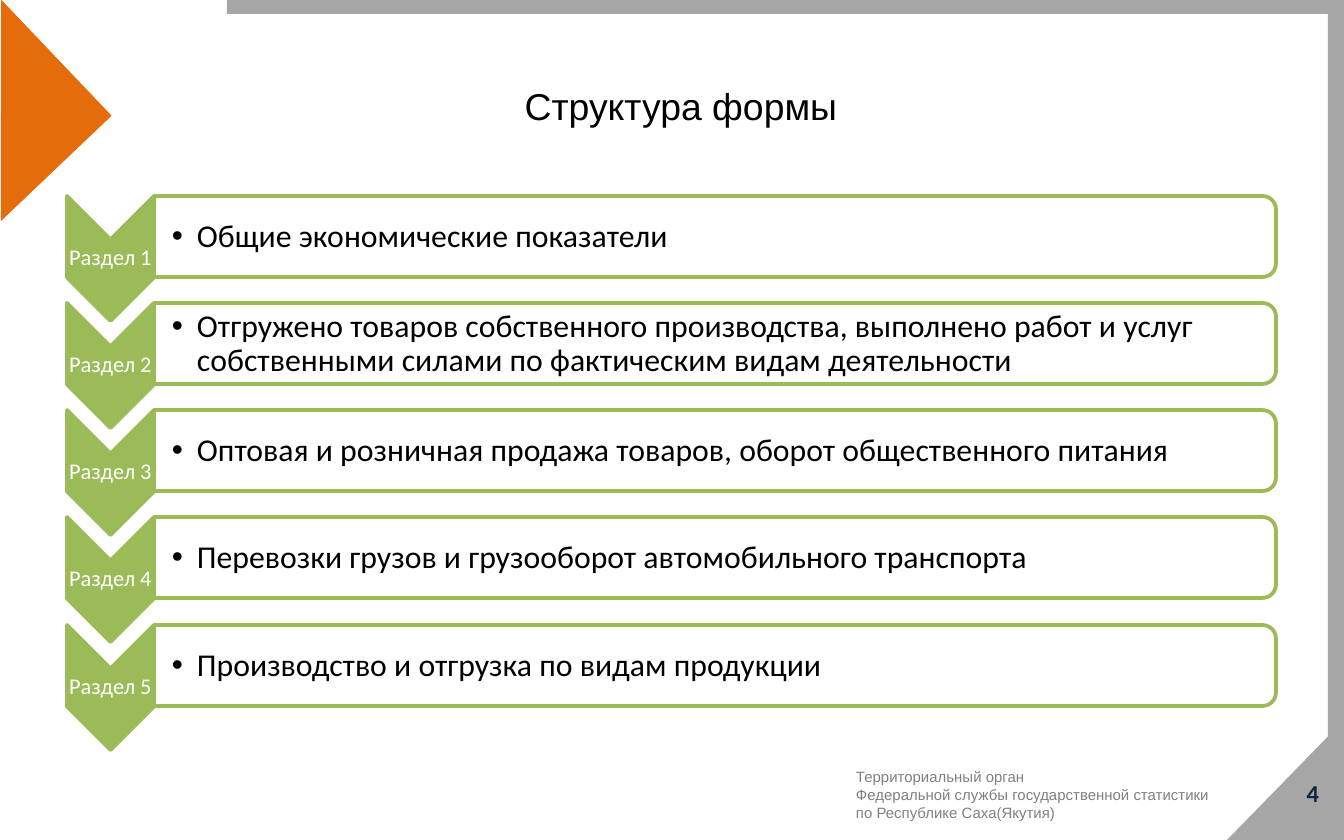
import pptx
import pptx.dml.color
import pptx.enum.shapes
import pptx.enum.text
import pptx.oxml.ns
import pptx.util
from lxml import etree

EMU_PER_PX = 914400 / 134.4
SHAPE = pptx.enum.shapes.MSO_SHAPE
ALIGN = pptx.enum.text.PP_ALIGN
GREY, ORANGE, GREEN, WHITE, BLACK = "A6A6A6", "E46C0A", "9BBB59", "FFFFFF", "000000"
FIRST_ROW_TOP = 196
LAST_ROW_TOP = 625
STANDARD_INSETS = (11, 5, 11, 5)

SECTIONS = [
    "Общие экономические показатели",
    "Отгружено товаров собственного производства, выполнено работ и услуг "
    "собственными силами по фактическим видам деятельности",
    "Оптовая и розничная продажа товаров, оборот общественного питания",
    "Перевозки грузов и грузооборот автомобильного транспорта",
    "Производство и отгрузка по видам продукции",
]
AGENCY = [
    "Территориальный орган",
    "Федеральной службы государственной статистики",
    "по Республике Саха(Якутия)",
]


def px(length):
    return pptx.util.Emu(round(length * EMU_PER_PX))


def color(value):
    return pptx.dml.color.RGBColor.from_string(value)


def add_figure(slide, kind, box, fill, rotation=0, outline=None):
    figure = slide.shapes.add_shape(kind, *map(px, box))
    figure.shadow.inherit = False
    figure.rotation = rotation
    figure.fill.solid()
    figure.fill.fore_color.rgb = color(fill)
    if outline:
        figure.line.color.rgb = color(outline)
        figure.line.width = pptx.util.Pt(2)
    else:
        figure.line.fill.background()
    return figure


def add_quarter_turned(slide, kind, visible_box, fill, rotation, outline=None):
    left, top, width, height = visible_box
    shift = (width - height) / 2
    frame = (left + shift, top - shift, height, width)
    return add_figure(slide, kind, frame, fill, rotation, outline)


def set_opacity(figure, percent):
    fill_color = figure.fill._xPr.find(".//" + pptx.oxml.ns.qn("a:srgbClr"))
    alpha = etree.SubElement(fill_color, pptx.oxml.ns.qn("a:alpha"))
    alpha.set("val", str(percent * 1000))


def add_bullet(paragraph, indent):
    properties = paragraph._p.get_or_add_pPr()
    properties.set("marL", str(px(indent)))
    properties.set("indent", str(-px(indent)))
    bullet_font = etree.SubElement(properties, pptx.oxml.ns.qn("a:buFont"))
    bullet_font.set("typeface", "Arial")
    bullet = etree.SubElement(properties, pptx.oxml.ns.qn("a:buChar"))
    bullet.set("char", "•")


def add_text(slide, box, lines, font, size, ink, align=ALIGN.LEFT,
             insets=STANDARD_INSETS, spacing=None, bullet_indent=None, bold=False):
    frame = slide.shapes.add_textbox(*map(px, box)).text_frame
    frame.word_wrap = True
    frame.vertical_anchor = pptx.enum.text.MSO_ANCHOR.MIDDLE
    (frame.margin_left, frame.margin_top,
     frame.margin_right, frame.margin_bottom) = map(px, insets)
    frame.text = "\n".join(lines)
    for paragraph in frame.paragraphs:
        paragraph.alignment = align
        paragraph.line_spacing = spacing
        if bullet_indent:
            add_bullet(paragraph, bullet_indent)
        paragraph.font.name = font
        paragraph.font.size = pptx.util.Pt(size)
        paragraph.font.bold = bold
        paragraph.font.color.rgb = color(ink)


def add_decoration(slide):
    add_quarter_turned(slide, SHAPE.RIGHT_TRIANGLE, (1227, 720, 117, 120), GREY, 270)
    add_figure(slide, SHAPE.RECTANGLE, (1328, 0, 16, 746), GREY)
    add_figure(slide, SHAPE.RECTANGLE, (227, 0, 1101, 14), GREY)
    add_figure(slide, SHAPE.RIGHT_TRIANGLE, (-79, 34, 160, 153), ORANGE, 226.4)


def add_section(slide, number, top, description):
    add_quarter_turned(slide, SHAPE.CHEVRON, (67, top, 87, 125), GREEN, 90, GREEN)
    add_text(slide, (67, top + 43, 87, 38), [f"Раздел {number}"], "Calibri", 12, WHITE,
             ALIGN.CENTER, insets=(1, 1, 1, 1), spacing=0.9)
    panel = add_quarter_turned(slide, SHAPE.ROUND_2_SAME_RECTANGLE,
                               (154, top, 1122, 81), WHITE, 90, GREEN)
    set_opacity(panel, 90)
    add_text(slide, (155, top + 4, 1118, 74), [description], "Calibri", 17, BLACK,
             insets=(17, 1, 1, 1), spacing=0.9, bullet_indent=25)


def main():
    presentation = pptx.Presentation()
    presentation.slide_width = px(1344)
    presentation.slide_height = px(840)
    slide = presentation.slides.add_slide(presentation.slide_layouts[6])

    add_decoration(slide)
    add_text(slide, (108, 75, 1146, 62), ["Структура формы"], "Arial", 20, BLACK,
             ALIGN.CENTER)
    row_span = LAST_ROW_TOP - FIRST_ROW_TOP
    for index, description in enumerate(SECTIONS):
        top = FIRST_ROW_TOP + index * row_span // (len(SECTIONS) - 1)
        add_section(slide, index + 1, top, description)
    add_text(slide, (845, 772, 499, 45), AGENCY, "Arial", 8, "808080")
    add_text(slide, (1275, 763, 55, 59), ["4"], "Calibri", 13, "0F243E",
             ALIGN.RIGHT, bold=True)

    presentation.save("out.pptx")


if __name__ == "__main__":
    main()
